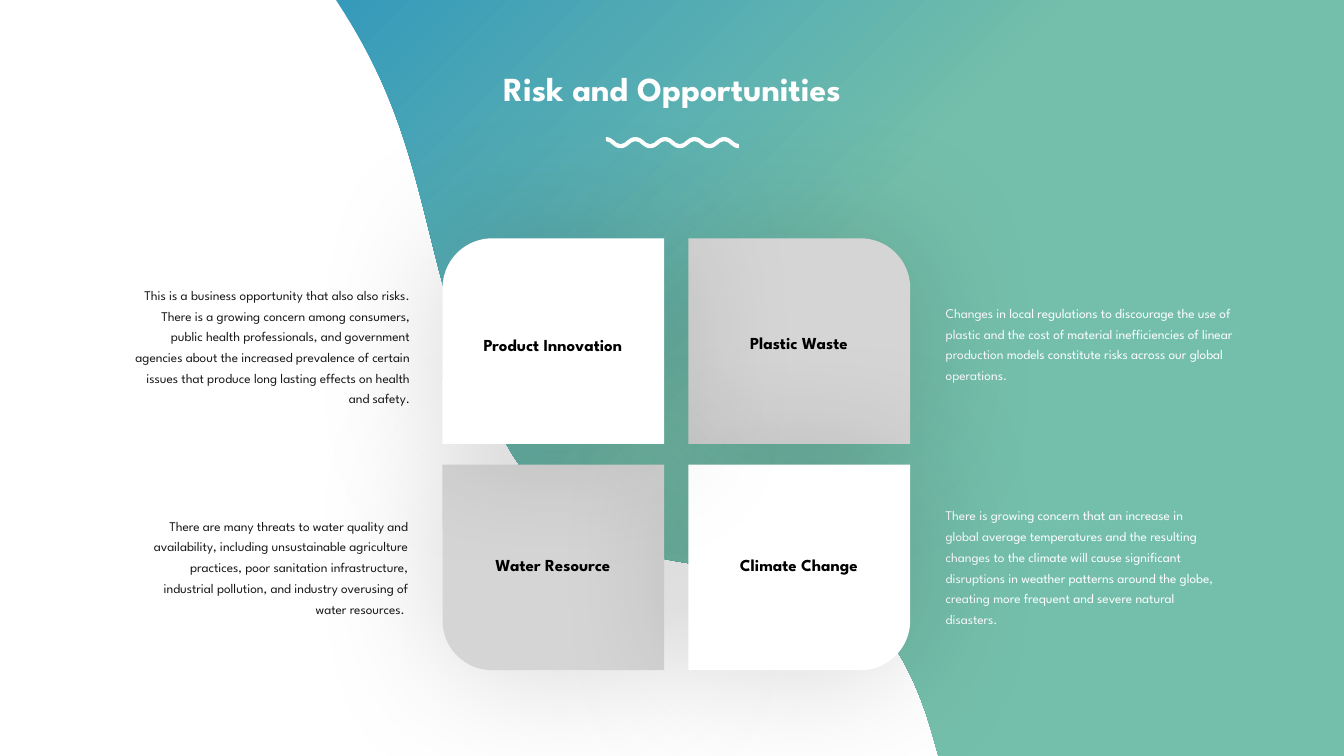
from pptx import Presentation
from pptx.dml.color import RGBColor
from pptx.enum.shapes import MSO_SHAPE
from pptx.enum.text import MSO_ANCHOR, MSO_AUTO_SIZE, PP_ALIGN
from pptx.oxml import parse_xml
from pptx.oxml.ns import nsdecls, qn
from pptx.util import Inches, Pt

LEFT, MID, RIGHT = PP_ALIGN.LEFT, PP_ALIGN.CENTER, PP_ALIGN.RIGHT
TOP = MSO_ANCHOR.TOP
GROW = MSO_AUTO_SIZE.SHAPE_TO_FIT_TEXT
ROUND = MSO_SHAPE.ROUND_1_RECTANGLE

FONT = "League Spartan"
COLORS = {"white": "FFFFFF", "black": "000000", "ink": "181717",
          "gray": "D5D5D5", "green": "74BFAB", "blue": "369ABA"}
WIDE, HIGH = Inches(40) // 3, Inches(7.5)

# Places and sizes are percentages of the slide's width and height.
CARD_X, CARD_Y, STEP_X, STEP_Y = 32.93, 31.53, 18.3, 29.93
CARD_W, CARD_H = 16.5, 27.2
LABEL_W, LABEL_H = 16.43, 3.47

# Column, row, label, label top, fill; later cards shade earlier ones.
CARDS = [
    (1, 0, "Plastic Waste", 43.6, "gray"),
    (0, 1, "Water Resource", 73.0, "gray"),
    (1, 1, "Climate Change", 72.93, "white"),
    (0, 0, "Product Innovation", 43.87, "white"),
]
NOTES = [
    ((8.82, 36.7, 22.43, 17.73), RIGHT, "ink",
     "This is a business opportunity that also also risks. There is a growing "
     "concern among consumers, public health professionals, and government "
     "agencies about the increased prevalence of certain issues that produce "
     "long lasting effects on health and safety."),
    ((69.63, 39.07, 23.1, 12.13), LEFT, "white",
     "Changes in local regulations to discourage the use of plastic and the "
     "cost of material inefficiencies of linear production models constitute "
     "risks across our global operations."),
    ((69.63, 65.87, 21.68, 17.73), LEFT, "white",
     "There is growing concern that an increase in global average temperatures "
     "and the resulting changes to the climate will cause significant "
     "disruptions in weather patterns around the globe, creating more frequent "
     "and severe natural disasters."),
    ((10.26, 67.23, 20.85, 14.93), RIGHT, "ink",
     "There are many threats to water quality and availability, including "
     "unsustainable agriculture practices, poor sanitation infrastructure, "
     "industrial pollution, and industry overusing of water resources. "),
]
# Outline of the green field: one point is a line, three are a curve.
FIELD = [
    [(25, 0)], [(100.28, 0)], [(100.28, 100)], [(69.83, 100)], [(69.38, 97.2)],
    [(68.48, 91.6), (67.28, 86.8), (65.55, 83.2)],
    [(58.65, 68.8), (45.38, 83.07), (37.65, 58.67)],
    [(30.9, 37.33), (32.78, 21.2), (25.43, 1.2)],
]


def spot(x, y):
    return round(WIDE * x / 100), round(HIGH * y / 100)


def rgb(name):
    return RGBColor.from_string(COLORS[name])


def write(frame, text, size=9.5, color="ink", bold=False, align=LEFT,
          lines=None, inset=None):
    frame.word_wrap = True
    frame.auto_size = GROW
    frame.vertical_anchor = TOP
    if inset is not None:
        frame.margin_left = frame.margin_right = Inches(inset)
        frame.margin_top = frame.margin_bottom = Inches(inset)
    para = frame.paragraphs[0]
    para.alignment = align
    para.line_spacing = lines
    run = para.add_run()
    run.text = text
    font = run.font
    font.name, font.size, font.bold = FONT, Pt(size), bold
    font.color.rgb = rgb(color)


def add_text(slide, box, text, **style):
    area = slide.shapes.add_textbox(*spot(*box[:2]), *spot(*box[2:]))
    write(area.text_frame, text, **style)


def add_form(slide, parts):
    """Draw parts of one point as lines and parts of three as curves."""
    spots = [spot(*point) for part in parts for point in part]
    pen = slide.shapes.build_freeform(*spots[0], scale=1.0)
    pen.add_line_segments(spots[1:], close=True)
    form = pen.convert_to_shape()
    form.shadow.inherit = False
    form.line.fill.background()
    lines = iter(list(form.element.spPr.iter(qn("a:lnTo"))))
    for part in parts[1:]:
        group = [next(lines) for point in part]
        if len(group) == 3:
            curve = parse_xml(f'<a:cubicBezTo {nsdecls("a")}/>')
            group[0].addprevious(curve)
            for line in group:
                curve.append(line[0])
                line.getparent().remove(line)
    return form


def add_field(slide):
    field = add_form(slide, FIELD)
    grad = parse_xml(
        f'<a:gradFill {nsdecls("a")} rotWithShape="1"><a:gsLst>'
        f'<a:gs pos="57000"><a:srgbClr val="{COLORS["green"]}"/></a:gs>'
        f'<a:gs pos="100000"><a:srgbClr val="{COLORS["blue"]}"/></a:gs>'
        '</a:gsLst><a:path path="circle">'
        '<a:fillToRect l="100000" t="100000"/></a:path></a:gradFill>')
    field.element.spPr.find(qn("a:custGeom")).addnext(grad)


def ripple(top, lean, way, left=45.08, step=0.55, swing=0.47, count=18):
    """Curves along one edge of the wave; way is 1 rightward, -1 leftward."""
    knots = []
    for i in range(count + 1):
        shift = (0, lean, 0, -lean)[i % 4]
        level = (0, 1, 2, 1)[i % 4]
        slope = (0, 1, 0, -1)[i % 4]
        knots.append((left + i * step + shift, top + level * swing, slope))
    knots = knots[::way]
    parts = [[knots[0][:2]]]
    for (x, y, slope), (x2, y2, slope2) in zip(knots, knots[1:]):
        near, far = (0.25 if s else 0.5 for s in (slope, slope2))
        gap = (x2 - x)
        parts.append([(x + near * gap, y + way * slope * swing * 0.4),
                      (x2 - far * gap, y2 - way * slope2 * swing * 0.4),
                      (x2, y2)])
    return parts


def add_wave(slide):
    parts = ripple(18.13, 0.06, 1) + ripple(18.67, -0.06, -1)
    wave = add_form(slide, parts)
    wave.fill.solid()
    wave.fill.fore_color.rgb = rgb("white")


def add_card(slide, col, row, label, top, color):
    left = CARD_X + col * STEP_X
    card = slide.shapes.add_shape(
        ROUND, *spot(left, CARD_Y + row * STEP_Y), *spot(CARD_W, CARD_H))
    card.adjustments[0] = 0.242
    card.fill.solid()
    card.fill.fore_color.rgb = rgb(color)
    card.line.fill.background()
    card.shadow.inherit = False
    props = card.element.spPr
    frame = props.find(qn("a:xfrm"))
    if col == 0:
        frame.set("flipH", "1")
    if row == 1:
        frame.set("flipV", "1")
    props.find(qn("a:effectLst")).append(parse_xml(
        f'<a:outerShdw {nsdecls("a")} blurRad="{Pt(100)}" algn="ctr" '
        f'rotWithShape="0"><a:srgbClr val="{COLORS["black"]}">'
        '<a:alpha val="17000"/></a:srgbClr></a:outerShdw>'))
    add_text(slide, (left, top, LABEL_W, LABEL_H), label, size=12,
             color="black", bold=True, align=MID, inset=0.03)


def set_title(slide, text):
    title = slide.shapes.title
    title.left, title.top = spot(30.36, 8.62)
    title.width, title.height = spot(39.3, 6.13)
    write(title.text_frame, text, size=24, color="white", bold=True,
          align=MID, inset=0.03)
    slide.shapes.element.append(title.element)  # bring above the field


def main():
    deck = Presentation()
    deck.slide_width, deck.slide_height = WIDE, HIGH
    slide = deck.slides.add_slide(deck.slide_layouts[5])
    add_field(slide)
    for box, align, color, text in NOTES:
        add_text(slide, box, text, color=color, align=align, lines=1.3)
    set_title(slide, "Risk and Opportunities")
    add_wave(slide)
    for card in CARDS:
        add_card(slide, *card)
    deck.save("out.pptx")


if __name__ == "__main__":
    main()
